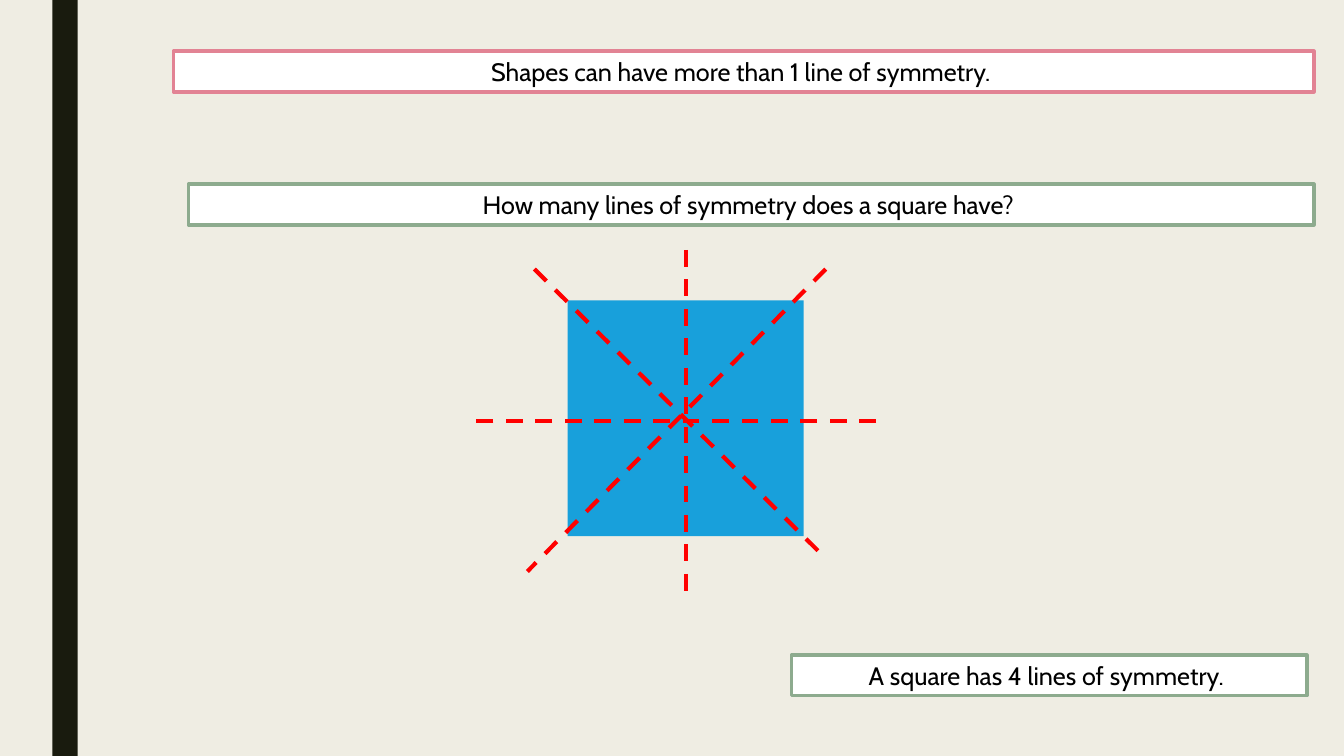
from pptx import Presentation
from pptx.dml.color import RGBColor
from pptx.enum.dml import MSO_LINE
from pptx.enum.shapes import MSO_CONNECTOR, MSO_SHAPE
from pptx.enum.text import MSO_ANCHOR, PP_ALIGN
from pptx.oxml.ns import qn
from pptx.util import Inches, Pt
from lxml import etree

RECT = MSO_SHAPE.RECTANGLE
STRAIGHT = MSO_CONNECTOR.STRAIGHT
DASH = MSO_LINE.DASH

# Content
BACKGROUND, BAR, SQUARE, SYMMETRY = "EFEDE3", "191B0E", "18A0DB", "FF0000"
PINK, GREEN = "E28394", "8DAB8E"
BAR_BOX = (0.52, 0, 0.25, 7.5)
SQUARE_BOX = (5.63, 2.98, 2.34, 2.34)
BOX_HEIGHT = 0.4
# text, left, top, width, border
STATEMENTS = [
    ("Shapes can have more than 1 line of symmetry. ", 1.72, 0.51, 11.31, PINK),
    ("How many lines of symmetry does a square have? ", 1.87, 1.83, 11.16, GREEN),
    ("A square has 4 lines of symmetry. ", 7.85, 6.5, 5.11, GREEN),
]
# x1, y1, x2, y2
SYMMETRY_LINES = [
    (6.8, 2.48, 6.8, 5.96),
    (8.69, 4.18, 4.65, 4.18),
    (8.19, 2.67, 5.23, 5.67),
    (5.3, 2.67, 8.19, 5.54),
]


def color(hex_code):
    return RGBColor.from_string(hex_code)


def add_rect(slide, box, fill, border=None):
    sp = slide.shapes.add_shape(RECT, *(Inches(v) for v in box))
    sp.shadow.inherit = False
    sp.fill.solid()
    sp.fill.fore_color.rgb = color(fill)
    if border:
        sp.line.color.rgb = color(border)
        sp.line.width = Pt(2.75)
    else:
        sp.line.fill.background()
    return sp


def set_text(sp, text, size=18, font="Cabin", ink="000000", align=PP_ALIGN.CENTER):
    tf = sp.text_frame
    tf.word_wrap = True
    tf.vertical_anchor = MSO_ANCHOR.MIDDLE
    p = tf.paragraphs[0]
    p.alignment = align
    r = p.add_run()
    r.text = text
    r.font.size = Pt(size)
    r.font.name = font
    r.font.color.rgb = color(ink)


def add_symmetry_line(slide, ends):
    line = slide.shapes.add_connector(STRAIGHT, *(Inches(v) for v in ends))
    line.line.color.rgb = color(SYMMETRY)
    line.line.width = Pt(3)
    line.line.dash_style = DASH
    etree.SubElement(line._element.spPr, qn("a:effectLst"))


def main():
    prs = Presentation()
    prs.slide_width, prs.slide_height = Inches(13.33), Inches(7.5)
    slide = prs.slides.add_slide(prs.slide_layouts[6])
    slide.background.fill.solid()
    slide.background.fill.fore_color.rgb = color(BACKGROUND)

    # Side bar and statements
    add_rect(slide, BAR_BOX, BAR)
    for text, left, top, width, border in STATEMENTS:
        sp = add_rect(slide, (left, top, width, BOX_HEIGHT), "FFFFFF", border)
        set_text(sp, text)

    # Square with its lines of symmetry
    add_rect(slide, SQUARE_BOX, SQUARE)
    for ends in SYMMETRY_LINES:
        add_symmetry_line(slide, ends)

    prs.save("out.pptx")


if __name__ == "__main__":
    main()
